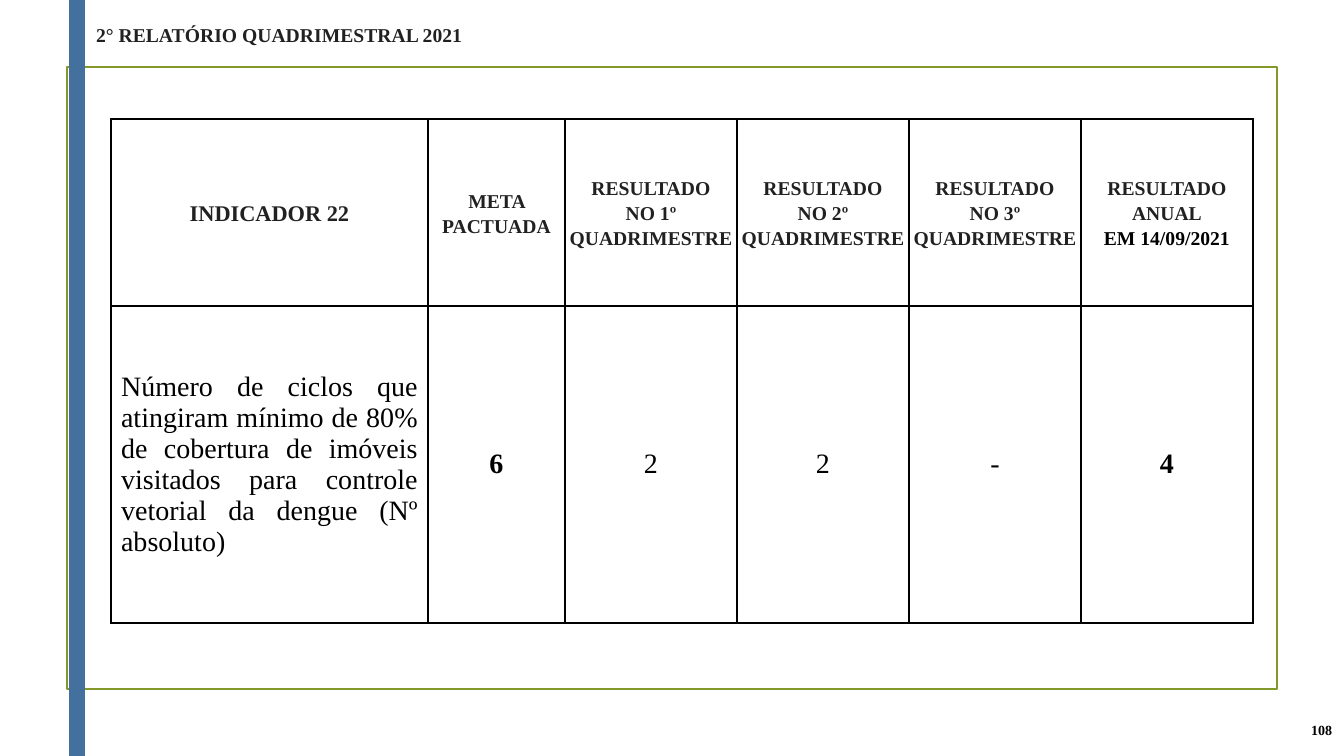
from lxml.etree import fromstring
from pptx import Presentation
from pptx.dml.color import RGBColor
from pptx.enum.shapes import MSO_SHAPE
from pptx.enum.text import MSO_ANCHOR, MSO_AUTO_SIZE, PP_ALIGN
from pptx.oxml.ns import nsdecls
from pptx.util import Pt

EMU_PER_PX = 914400 / 100.8
COLORS = {
    "white": "FFFFFF",
    "black": "000000",
    "heading": "212121",
    "frame": "83992A",
    "bar": "44709D",
}


def px(*lengths):
    return [round(length * EMU_PER_PX) for length in lengths]


def format_paragraph(paragraph, size, bold, color, alignment):
    paragraph.alignment = alignment
    for run in paragraph.runs:
        run.font.name = "Times New Roman"
        run.font.size = Pt(size)
        run.font.bold = bold
        run.font.color.rgb = RGBColor.from_string(COLORS[color])


presentation = Presentation()
presentation.slide_width, presentation.slide_height = px(1344, 756)
slide = presentation.slides.add_slide(presentation.slide_layouts[5])

# Frame and side bar
frame = slide.shapes.add_shape(MSO_SHAPE.RECTANGLE, *px(67, 67, 1210, 622))
frame.shadow.inherit = False
frame.fill.background()
frame.line.color.rgb = RGBColor.from_string(COLORS["frame"])
frame.line.width = Pt(1.25)

bar = slide.shapes.add_shape(MSO_SHAPE.RECTANGLE, *px(69, 0, 16, 756))
bar.shadow.inherit = False
bar.fill.solid()
bar.fill.fore_color.rgb = RGBColor.from_string(COLORS["bar"])
bar.line.fill.background()

# Report title and page number
title = slide.shapes.title
title.left, title.top, title.width, title.height = px(86, 18, 403, 34)
title.text_frame.text = "2° RELATÓRIO QUADRIMESTRAL 2021"
title.text_frame.word_wrap = False
title.text_frame.auto_size = MSO_AUTO_SIZE.NONE
title.text_frame.vertical_anchor = MSO_ANCHOR.TOP
format_paragraph(title.text_frame.paragraphs[0], 14, True, "heading", PP_ALIGN.LEFT)

page_number = slide.shapes.add_textbox(*px(1166, 708, 176, 44))
page_number.text_frame.word_wrap = True
page_number.text_frame.vertical_anchor = MSO_ANCHOR.MIDDLE
page_number.text_frame.text = "108"
format_paragraph(page_number.text_frame.paragraphs[0], 10, True, "black", PP_ALIGN.RIGHT)

# Indicator table
headers = [
    "INDICADOR 22",
    "META PACTUADA",
    *[f"RESULTADO\nNO {number}º QUADRIMESTRE" for number in (1, 2, 3)],
    "RESULTADO ANUAL\nEM 14/09/2021",
]
values = [
    "Número de ciclos que atingiram mínimo de 80% de cobertura de imóveis "
    "visitados para controle vetorial da dengue (Nº absoluto)",
    "6", "2", "2", "-", "4",
]
bold_value_columns = (1, 5)

table = slide.shapes.add_table(2, 6, *px(111, 119, 1142, 504)).table
for column, width in zip(table.columns, px(317, 137, 172, 172, 172, 172)):
    column.width = width
for row, height in zip(table.rows, px(187, 317)):
    row.height = height

for row_index, texts in enumerate((headers, values)):
    for column_index, text in enumerate(texts):
        cell = table.cell(row_index, column_index)
        cell.text_frame.text = text
        cell.vertical_anchor = MSO_ANCHOR.MIDDLE
        cell.fill.solid()
        cell.fill.fore_color.rgb = RGBColor.from_string(COLORS["white"])

        if row_index == 0:
            cell.margin_left, cell.margin_right, cell.margin_top, cell.margin_bottom = px(1, 1, 1, 1)
            size = 16 if column_index == 0 else 14
            for paragraph in cell.text_frame.paragraphs:
                color = "black" if paragraph.text.startswith("EM ") else "heading"
                format_paragraph(paragraph, size, True, color, PP_ALIGN.CENTER)
                paragraph.line_spacing = 1.15
        else:
            alignment = PP_ALIGN.JUSTIFY if column_index == 0 else PP_ALIGN.CENTER
            bold = column_index in bold_value_columns
            format_paragraph(cell.text_frame.paragraphs[0], 20, bold, "black", alignment)

        properties = cell._tc.get_or_add_tcPr()
        for position, side in enumerate(("lnL", "lnR", "lnT", "lnB")):
            border = fromstring(
                f'<a:{side} {nsdecls("a")} w="{Pt(1)}"><a:solidFill>'
                f'<a:srgbClr val="{COLORS["black"]}"/></a:solidFill></a:{side}>'
            )
            properties.insert(position, border)

presentation.save("out.pptx")
